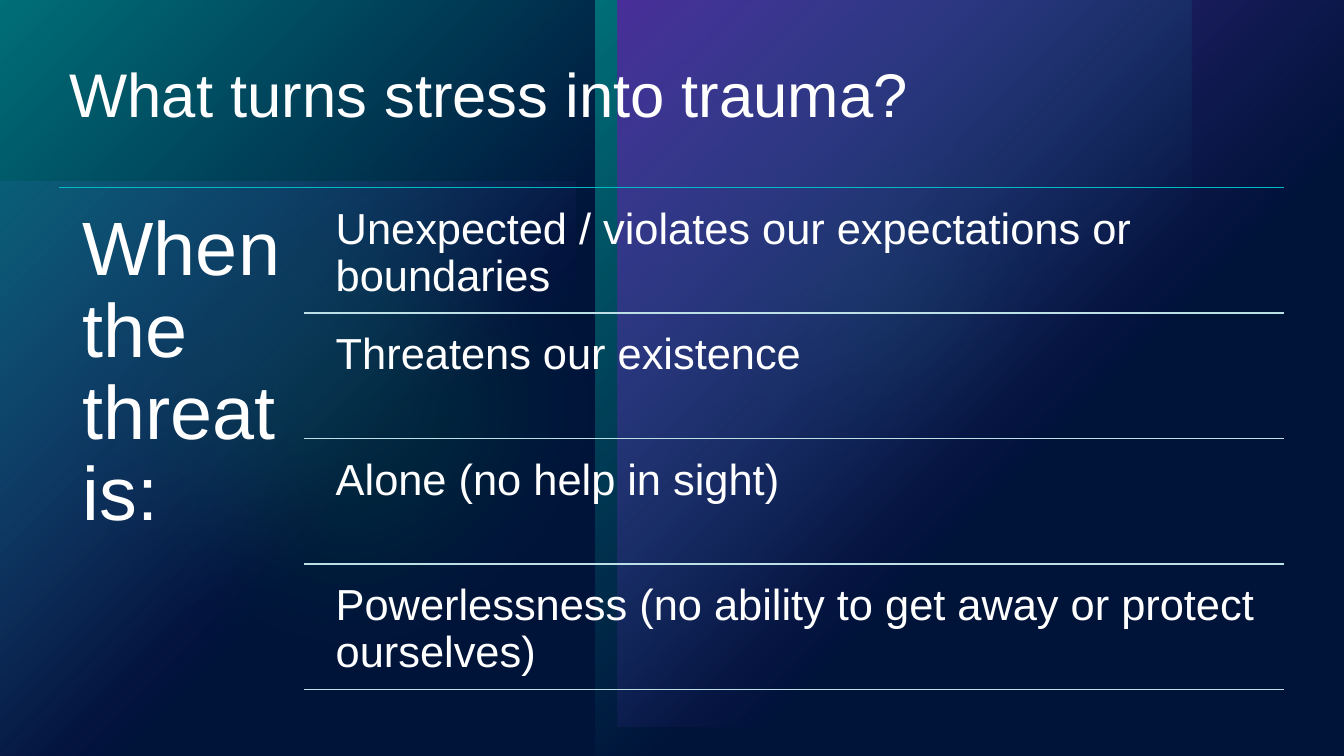
from dataclasses import dataclass

from lxml import etree
from pptx import Presentation
from pptx.dml.color import RGBColor
from pptx.enum.shapes import MSO_CONNECTOR, MSO_SHAPE
from pptx.enum.text import MSO_ANCHOR, PP_ALIGN
from pptx.oxml.ns import qn
from pptx.util import Inches, Pt

RECT, OVAL = MSO_SHAPE.RECTANGLE, MSO_SHAPE.OVAL
STRAIGHT = MSO_CONNECTOR.STRAIGHT
TOP, LEFT = MSO_ANCHOR.TOP, PP_ALIGN.LEFT

TITLE = "What turns stress into trauma?"
LEAD = "When the threat is:"
THREATS = [
    "Unexpected / violates our expectations or boundaries",
    "Threatens our existence",
    "Alone (no help in sight)",
    "Powerlessness (no ability to get away or protect ourselves)",
]


@dataclass(frozen=True)
class Theme:
    font: str = "Arial"
    title_size: int = 44
    lead_size: int = 54
    row_size: int = 31
    text: str = "FFFFFF"
    navy: str = "002060"
    black: str = "000000"
    purple: str = "794DFF"
    green: str = "00D17D"
    teal: str = "00BAC8"
    rule: str = "BDE0E6"


THEME = Theme()

# shape, colour, opacity in percent, style, (left, top, width, height)
BACKDROP = [
    (RECT, THEME.purple, 60, "fade", (0, 1.8, 5.71, 5.71)),
    (OVAL, THEME.green, 60, "glow", (6.29, 0.43, 4.72, 4.72)),
    (OVAL, THEME.green, 20, "glow", (0, 0.56, 6.94, 6.94)),
    (RECT, THEME.teal, 100, "fade", (0, 0, 5.91, 7.5)),
    (RECT, THEME.teal, 100, "fade", (5.91, 0, 5.91, 7.5)),
    (RECT, THEME.purple, 100, "fade", (6.13, 0, 7.21, 7.21)),
    (RECT, THEME.black, 40, "flat", (0, 0, 13.33, 7.5)),
]
FADE_END = 0.6
GLOW_BLUR = 1.39

MARGIN, RIGHT = 0.59, 12.73
LIST_TOP, ROW_PITCH, ROW_HEIGHT = 1.86, 1.245, 1.18
ROW_GAP = 0.06
RULE_LEFT, ROW_LEFT = 3.02, 3.2


def rgb(value):
    return RGBColor.from_string(value)


def set_alpha(color_el, percent):
    etree.SubElement(color_el, qn("a:alpha"), val=str(percent * 1000))


def add_backdrop(s, kind, color, opacity, style, box):
    """Add one translucent shape: a diagonal fade, a blurred glow or a flat tint."""
    sp = s.shapes.add_shape(kind, *map(Inches, box))
    sp.line.fill.background()
    sp.shadow.inherit = False
    props = sp._element.spPr
    if style == "fade":
        sp.fill.gradient()
        sp.fill.gradient_angle = 315
        for stop, position in zip(sp.fill.gradient_stops, (0, FADE_END)):
            stop.color.rgb = rgb(color)
            stop.position = position
        alphas = (opacity, 0)
    else:
        sp.fill.solid()
        sp.fill.fore_color.rgb = rgb(color)
        alphas = (opacity,)
    for color_el, alpha in zip(props.iter(qn("a:srgbClr")), alphas):
        set_alpha(color_el, alpha)
    if style == "glow":
        etree.SubElement(props.find(qn("a:effectLst")), qn("a:softEdge"),
                         rad=str(Inches(GLOW_BLUR)))


def write_text(sp, text, *, size, inset=None):
    tf = sp.text_frame
    tf.word_wrap = True
    tf.vertical_anchor = TOP
    if inset is not None:
        tf.margin_left = tf.margin_right = Inches(inset)
        tf.margin_top = tf.margin_bottom = Inches(inset)
    p = tf.paragraphs[0]
    p.alignment = LEFT
    p.line_spacing = 0.9
    r = p.add_run()
    r.text = text
    r.font.name = THEME.font
    r.font.size = Pt(size)
    r.font.color.rgb = rgb(THEME.text)


def add_text(s, text, box, **fmt):
    write_text(s.shapes.add_textbox(*map(Inches, box)), text, **fmt)


def add_rule(s, left, y, color):
    rule = s.shapes.add_connector(
        STRAIGHT, Inches(left), Inches(y), Inches(RIGHT), Inches(y))
    rule.line.color.rgb = rgb(color)
    rule.line.width = Pt(1)
    etree.SubElement(rule._element.spPr, qn("a:effectLst"))


def add_title(s):
    title = s.shapes.title
    title.left, title.top = Inches(MARGIN), Inches(MARGIN)
    title.width, title.height = Inches(RIGHT - MARGIN), Inches(1.11)
    write_text(title, TITLE, size=THEME.title_size)
    s.shapes._spTree.append(title._element)  # bring in front of the backdrop


def add_threats(s):
    add_rule(s, MARGIN, LIST_TOP, THEME.teal)
    add_text(s, LEAD, (MARGIN, LIST_TOP, 2.43, 5.04),
             size=THEME.lead_size, inset=0.23)
    for i, threat in enumerate(THREATS):
        top = LIST_TOP + i * ROW_PITCH
        add_text(s, threat,
                 (ROW_LEFT, top + ROW_GAP, RIGHT - ROW_LEFT, ROW_HEIGHT),
                 size=THEME.row_size, inset=0.13)
        add_rule(s, RULE_LEFT, top + ROW_PITCH, THEME.rule)


def main():
    prs = Presentation()
    prs.slide_width, prs.slide_height = Inches(13.33), Inches(7.5)
    s = prs.slides.add_slide(prs.slide_layouts[5])
    s.background.fill.solid()
    s.background.fill.fore_color.rgb = rgb(THEME.navy)
    for layer in BACKDROP:
        add_backdrop(s, *layer)
    add_title(s)
    add_threats(s)
    prs.save("out.pptx")


if __name__ == "__main__":
    main()
